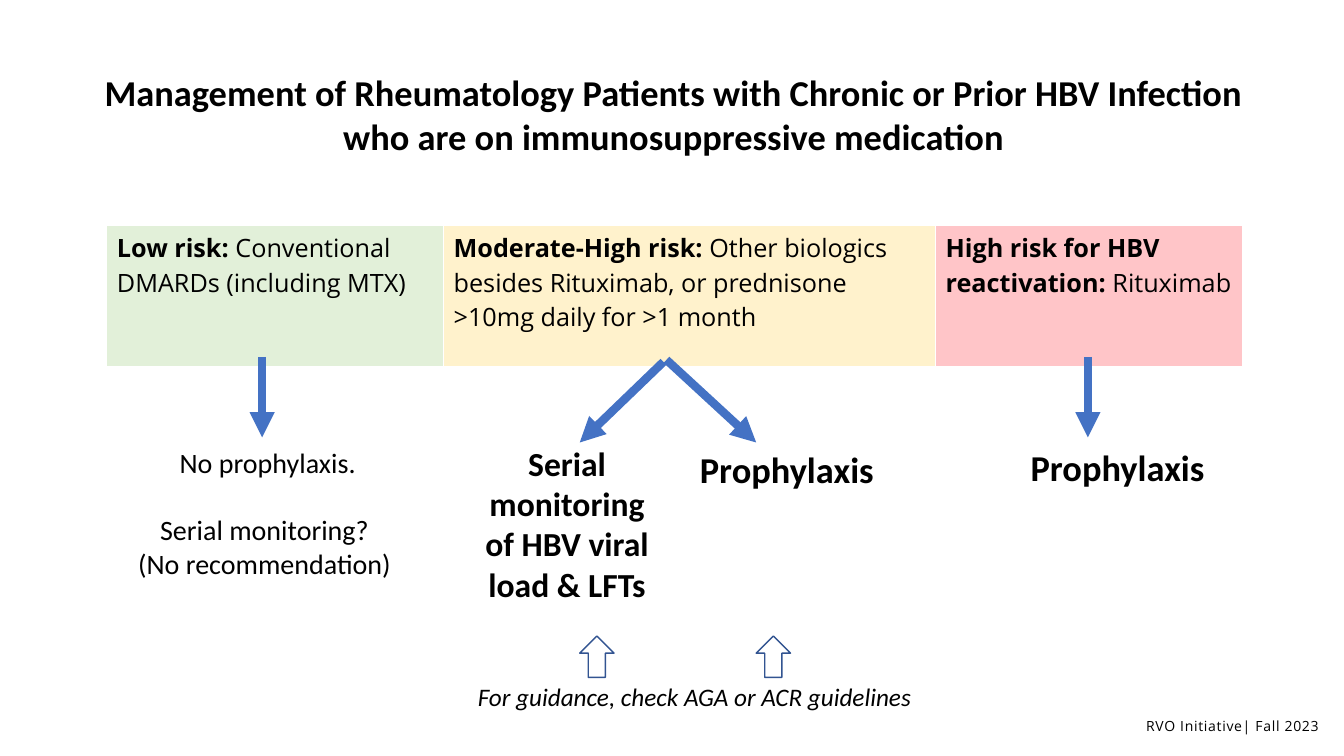
"""Builds a slide on managing rheumatology patients with HBV infection."""
from lxml import etree
from pptx import Presentation
from pptx.dml.color import RGBColor
from pptx.enum.shapes import MSO_CONNECTOR, MSO_SHAPE
from pptx.enum.text import PP_ALIGN
from pptx.oxml.ns import qn
from pptx.util import Inches, Pt

LEFT, CENTER, RIGHT = PP_ALIGN.LEFT, PP_ALIGN.CENTER, PP_ALIGN.RIGHT
STRAIGHT, UP_ARROW = MSO_CONNECTOR.STRAIGHT, MSO_SHAPE.UP_ARROW
COLORS = {"text": "000000", "low": "E2F0D9", "moderate": "FFF2CC",
          "high": "FFC5C8", "arrow": "4472C4", "outline": "325491"}
RISKS = [
    ("low", 3.34, "Low risk: ", "Conventional DMARDs (including MTX)"),
    ("moderate", 4.88, "Moderate-High risk: ",
     "Other biologics besides Rituximab, or prednisone >10mg daily for >1 month"),
    ("high", 3.04, "High risk for HBV reactivation: ", "Rituximab"),
]
ARROWS = [(2.6, 3.54, 2.6, 4.34), (6.58, 3.59, 5.75, 4.39),
          (6.61, 3.57, 7.5, 4.39), (10.79, 3.54, 10.79, 4.34)]


def rgb(name):
    """Return the named colour."""
    return RGBColor.from_string(COLORS[name])


def style(p, size, name="Calibri", bold=None, italic=None):
    """Set the font of a paragraph."""
    font = p.font
    font.size, font.name, font.bold, font.italic = Pt(size), name, bold, italic
    font.color.rgb = rgb("text")


def add_text(s, box, lines, size, align=CENTER, bold=None, italic=None):
    """Add a wrapped text box with one paragraph per line."""
    tf = s.shapes.add_textbox(*map(Inches, box)).text_frame
    tf.word_wrap = True
    tf.text = "\n".join(lines)
    for p in tf.paragraphs:
        p.alignment = align
        style(p, size, bold=bold, italic=italic)
    return tf


def add_risk_table(s):
    """Add the row of risk groups."""
    width = sum(risk[1] for risk in RISKS)
    table = s.shapes.add_table(1, len(RISKS), Inches(1.06), Inches(2.24),
                               Inches(width), Inches(1.4)).table
    for i, (color, col_width, label, drugs) in enumerate(RISKS):
        table.columns[i].width = Inches(col_width)
        cell = table.cell(0, i)
        cell.fill.solid()
        cell.fill.fore_color.rgb = rgb(color)
        p = cell.text_frame.paragraphs[0]
        for text, bold in ((label, True), (drugs, False)):
            r = p.add_run()
            r.text = text
            r.font.bold = bold
            r.font.size, r.font.name = Pt(18), "Open Sans"
            r.font.color.rgb = rgb("text")


def add_arrow(s, points):
    """Add a thick arrow from one point to another."""
    c = s.shapes.add_connector(STRAIGHT, *map(Inches, points))
    c.line.color.rgb = rgb("arrow")
    c.line.width = Pt(6)
    etree.SubElement(c.line._get_or_add_ln(), qn("a:tailEnd"), type="triangle")
    etree.SubElement(c._element.spPr, qn("a:effectLst"))


def add_up_arrow(s, left):
    """Add an outlined arrow that points up."""
    sp = s.shapes.add_shape(UP_ARROW, Inches(left), Inches(6.31),
                            Inches(0.34), Inches(0.41))
    sp.shadow.inherit = False
    sp.fill.background()
    sp.line.color.rgb = rgb("outline")
    sp.line.width = Pt(1)


def add_footer(s):
    """Add the spaced footer at the bottom right."""
    tf = add_text(s, (10.59, 7.12, 2.49, 0.17), ["RVO Initiative| Fall 2023"], 10, RIGHT)
    tf.margin_left = tf.margin_right = tf.margin_top = tf.margin_bottom = 0
    p = tf.paragraphs[0]
    style(p, 10, "Open Sans")
    p.line_spacing = Pt(12)
    p.runs[0].font._element.set("spc", "50")


def main():
    """Build and save the slide."""
    prs = Presentation()
    prs.slide_width, prs.slide_height = Inches(13.33), Inches(7.5)
    s = prs.slides.add_slide(prs.slide_layouts[6])
    add_risk_table(s)
    add_text(s, (0.62, 0.65, 12.13, 0.98),
             ["Management of Rheumatology Patients with Chronic or Prior HBV Infection "
              "who are on immunosuppressive medication"], 26, bold=True)
    low = add_text(s, (1.27, 4.37, 2.77, 1.45),
                   ["No prophylaxis.", "Serial monitoring? ", "(No recommendation) "], 20)
    low.paragraphs[1].space_before = Pt(24)
    add_text(s, (4.66, 4.34, 1.93, 1.72),
             ["Serial monitoring of HBV viral load & LFTs"], 24, bold=True)
    for box in ((6.75, 4.39, 2.11, 0.54), (9.47, 4.37, 3.23, 0.54)):
        add_text(s, box, ["Prophylaxis"], 26, bold=True)
    for points in ARROWS:
        add_arrow(s, points)
    add_text(s, (4.64, 6.71, 4.82, 0.4),
             ["For guidance, check AGA or ACR guidelines"], 18, LEFT, italic=True)
    for left in (5.75, 7.5):
        add_up_arrow(s, left)
    add_footer(s)
    prs.save("out.pptx")


if __name__ == "__main__":
    main()
